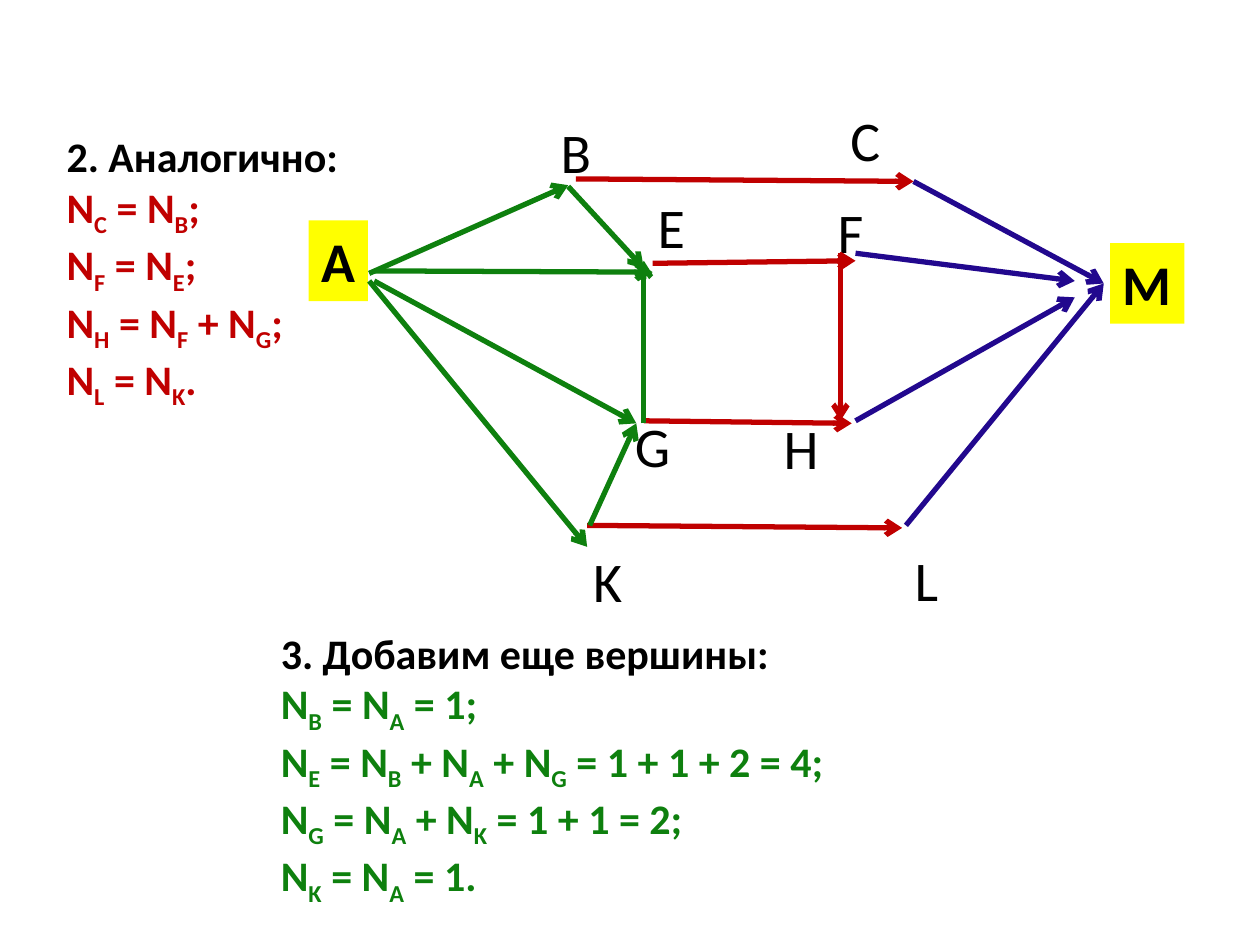
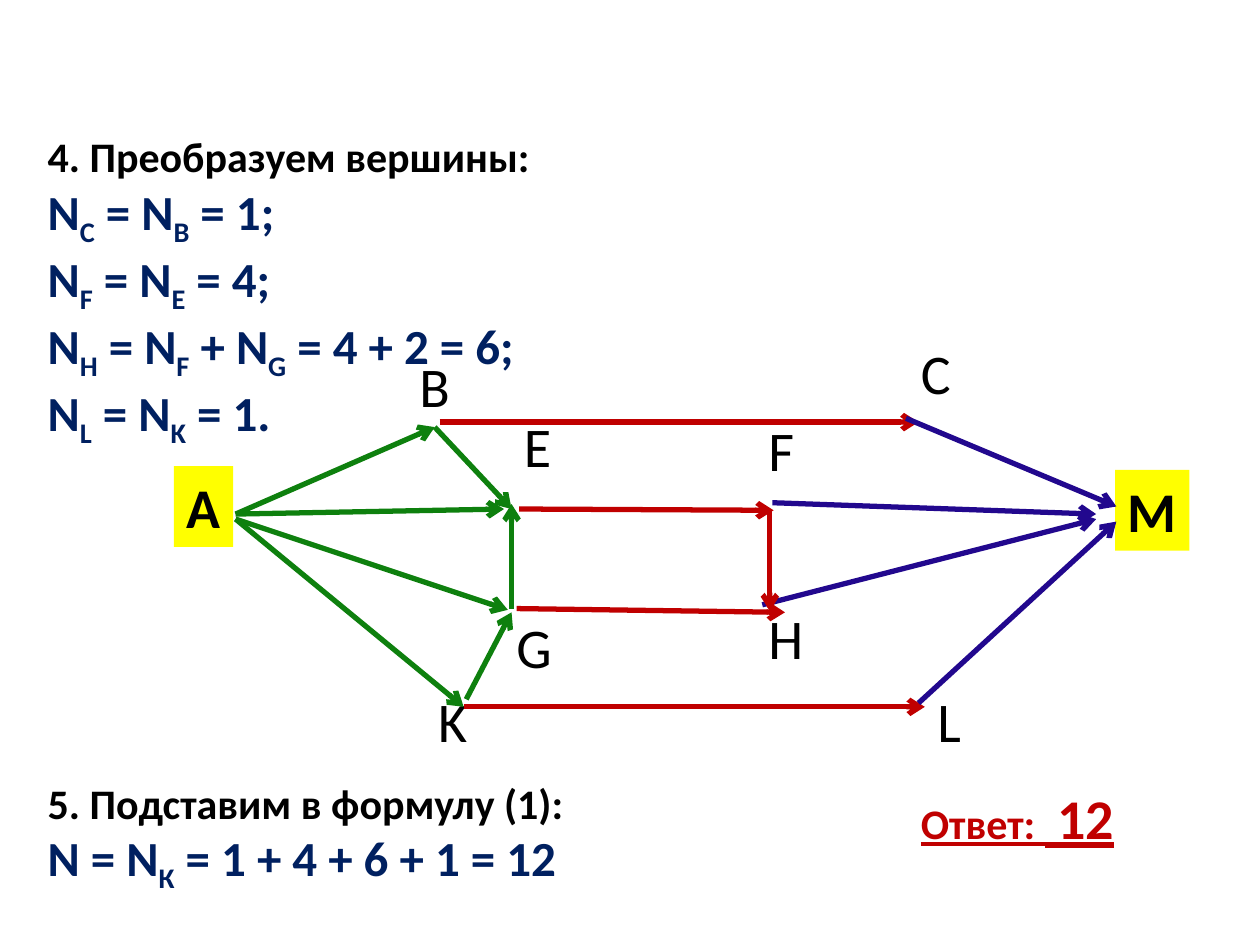
from lxml.etree import SubElement
from pptx import Presentation
from pptx.dml.color import RGBColor
from pptx.enum.shapes import MSO_CONNECTOR, MSO_SHAPE
from pptx.enum.text import MSO_ANCHOR, PP_ALIGN
from pptx.oxml.ns import qn
from pptx.util import Inches, Pt

BLACK, RED, GREEN, BLUE, NAVY, YELLOW = "000000", "C00000", "0E800E", "22088E", "002060", "FFFF00"
LABEL_HEIGHT = 0.64
LABEL_WIDTHS = {"A": 0.47, "B": 0.45, "C": 0.44, "E": 0.42, "F": 0.41,
                "G": 0.49, "H": 0.48, "K": 0.44, "L": 0.42, "M": 0.59}


def write(paragraph, text, size=32, color=BLACK, bold=False, underline=False):
    """Add text to a paragraph; the letter after each "_" is a subscript."""
    first, *rest = text.split("_")
    pieces = [(first, False)]
    for piece in rest:
        pieces += [(piece[0], True), (piece[1:], False)]
    for piece, subscript in pieces:
        run = paragraph.add_run()
        run.text = piece
        font = run.font
        font.name = "Calibri"
        font.size = Pt(size)
        font.bold = bold
        font.underline = underline
        font.color.rgb = RGBColor.from_string(color)
        if subscript:
            run._r.get_or_add_rPr().set("baseline", "-25000")


def add_arrow(slide, color, start_x, start_y, end_x, end_y):
    arrow = slide.shapes.add_connector(
        MSO_CONNECTOR.STRAIGHT, Inches(start_x), Inches(start_y), Inches(end_x), Inches(end_y))
    arrow.line.color.rgb = RGBColor.from_string(color)
    arrow.line.width = Pt(3)
    SubElement(arrow.line._get_or_add_ln(), qn("a:tailEnd"), type="arrow")
    SubElement(arrow._element.spPr, qn("a:effectLst"))


analogy_slide = {
    "notes": [
        (0.43, 0.99, 3.7, 2.12, "2. Аналогично:", 24, RED,
         ["N_C = N_B;", "N_F = N_E;", "N_H = N_F + N_G;", "N_L = N_K."]),
        (2.13, 4.93, 6.58, 2.12, "3. Добавим еще вершины:", 24, GREEN,
         ["N_B = N_A = 1;", "N_E = N_B + N_A + N_G = 1 + 1 + 2 = 4;",
          "N_G = N_A + N_K = 1 + 1 = 2;", "N_K = N_A = 1."]),
    ],
    "vertices": {"A": (2.45, 1.75), "B": (4.35, 0.88), "C": (6.65, 0.79), "E": (5.12, 1.48),
                 "F": (6.55, 1.52), "G": (4.94, 3.22), "H": (6.12, 3.23), "K": (4.61, 4.29),
                 "L": (7.16, 4.28), "M": (8.81, 1.93)},
    "arrows": [
        (BLUE, 7.25, 1.44, 8.76, 2.25),
        (BLUE, 7.19, 4.17, 8.76, 2.25),
        (BLUE, 6.79, 2.01, 8.53, 2.23),
        (BLUE, 6.79, 3.34, 8.53, 2.36),
        (RED, 4.57, 1.42, 7.25, 1.44),
        (RED, 4.66, 4.17, 7.16, 4.19),
        (RED, 5.18, 2.09, 6.79, 2.07),
        (RED, 5.11, 3.34, 6.76, 3.36),
        (RED, 6.67, 2.01, 6.67, 3.34),
        (GREEN, 2.93, 2.17, 4.51, 1.47),
        (GREEN, 2.97, 2.23, 5.05, 3.36),
        (GREEN, 2.97, 2.15, 5.18, 2.16),
        (GREEN, 2.93, 2.23, 4.66, 4.34),
        (GREEN, 5.11, 3.36, 5.11, 2.07),
        (GREEN, 4.51, 1.48, 5.11, 2.13),
        (GREEN, 4.68, 4.17, 5.05, 3.36),
    ],
}
answer_slide = {
    "notes": [
        (0.28, 0.99, 4.17, 2.39, "4. Преобразуем вершины:", 28, NAVY,
         ["N_C = N_B = 1;", "N_F = N_E = 4;", "N_H = N_F + N_G = 4 + 2 = 6;", "N_L = N_K = 1."]),
        (0.28, 6.12, 5.35, 1.38, "5. Подставим в формулу (1):", 28, NAVY,
         ["N = N_К = 1 + 4 + 6 + 1 = 12"]),
    ],
    "vertices": {"A": (1.38, 3.7), "B": (3.23, 2.74), "C": (7.21, 2.64), "E": (4.06, 3.22),
                 "F": (6, 3.25), "G": (4, 4.81), "H": (6, 4.74), "K": (3.38, 5.4),
                 "L": (7.34, 5.4), "M": (8.85, 3.73)},
    "arrows": [
        (RED, 3.49, 3.35, 7.29, 3.35),
        (RED, 3.68, 5.61, 7.34, 5.61),
        (GREEN, 1.87, 4.12, 4.03, 4.84),
        (GREEN, 1.87, 4.12, 3.68, 5.61),
        (RED, 4.12, 4.04, 6.14, 4.05),
        (RED, 4.1, 4.83, 6.23, 4.86),
        (BLUE, 7.19, 3.32, 8.86, 4.02),
        (BLUE, 7.29, 5.58, 8.86, 4.14),
        (BLUE, 6.13, 3.99, 8.7, 4.08),
        (BLUE, 6.05, 4.8, 8.7, 4.12),
        (GREEN, 1.87, 4.08, 3.45, 3.39),
        (GREEN, 3.45, 3.39, 4.06, 4.04),
        (GREEN, 4.06, 4.83, 4.06, 4),
        (RED, 6.11, 4.04, 6.11, 4.85),
        (GREEN, 3.7, 5.55, 4.06, 4.86),
        (GREEN, 1.87, 4.08, 4, 4.04),
    ],
}

presentation = Presentation()
presentation.slide_width = Inches(10)
presentation.slide_height = Inches(7.5)

for content in (analogy_slide, answer_slide):
    slide = presentation.slides.add_slide(presentation.slide_layouts[6])

    for left, top, width, height, heading, size, color, formulas in content["notes"]:
        note = slide.shapes.add_textbox(Inches(left), Inches(top), Inches(width), Inches(height))
        frame = note.text_frame
        frame.word_wrap = True
        write(frame.paragraphs[0], heading, size=24, bold=True)
        for formula in formulas:
            write(frame.add_paragraph(), formula, size=size, color=color, bold=True)

    for letter, (left, top) in content["vertices"].items():
        box = Inches(left), Inches(top), Inches(LABEL_WIDTHS[letter]), Inches(LABEL_HEIGHT)
        is_terminal = letter in "AM"
        if is_terminal:
            label = slide.shapes.add_shape(MSO_SHAPE.RECTANGLE, *box)
            label.shadow.inherit = False
            label.fill.solid()
            label.fill.fore_color.rgb = RGBColor.from_string(YELLOW)
            label.line.fill.background()
        else:
            label = slide.shapes.add_textbox(*box)
        frame = label.text_frame
        frame.word_wrap = False
        frame.vertical_anchor = MSO_ANCHOR.TOP
        frame.paragraphs[0].alignment = PP_ALIGN.LEFT
        write(frame.paragraphs[0], letter, bold=is_terminal)

    for arrow in content["arrows"]:
        add_arrow(slide, *arrow)

answer = slide.shapes.add_textbox(Inches(7.21), Inches(6.17), Inches(1.8), Inches(LABEL_HEIGHT))
answer.text_frame.word_wrap = False
for text, size in (("Ответ: ", 24), (" 12", 32), (" ", 24)):
    write(answer.text_frame.paragraphs[0], text, size=size, color=RED, bold=True, underline=True)

presentation.save("out.pptx")
